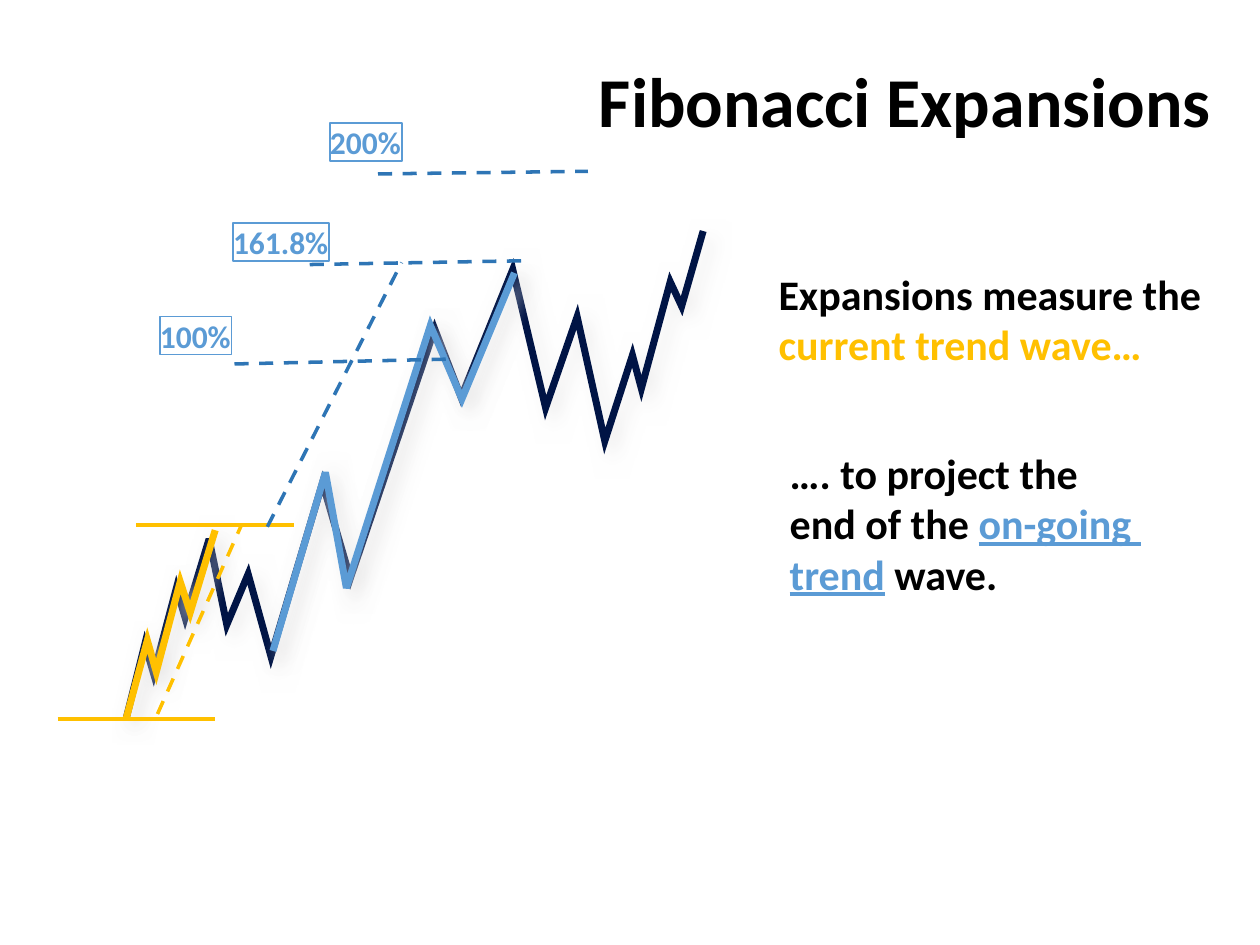
from pptx import Presentation
from pptx.dml.color import RGBColor
from pptx.enum.dml import MSO_LINE
from pptx.enum.shapes import MSO_CONNECTOR, MSO_SHAPE
from pptx.enum.text import MSO_ANCHOR, MSO_AUTO_SIZE, PP_ALIGN
from pptx.oxml import parse_xml
from pptx.oxml.ns import nsdecls, qn
from pptx.util import Pt

BLACK = RGBColor(0x00, 0x00, 0x00)
NAVY = RGBColor(0x00, 0x14, 0x45)
GOLD = RGBColor(0xFF, 0xC0, 0x00)
BLUE = RGBColor(0x5B, 0x9B, 0xD5)
DARK_BLUE = RGBColor(0x2E, 0x75, 0xB5)

# Wave turning points
PRICE = [(72, 411), (82.8, 368), (87.8, 385), (100.8, 336), (105.8, 353),
         (119.5, 308), (129.6, 357), (141.8, 328), (154.8, 375), (184.3, 276),
         (200.2, 330.5), (248.4, 188), (263.5, 227), (293, 154), (311.8, 233),
         (329.8, 181), (345.6, 252), (361.4, 203), (366.5, 222), (383, 161),
         (389.5, 175), (401.8, 132)]
CURRENT_WAVE = [(72, 411), (84.2, 366), (89.3, 384), (103, 332.5), (108.7, 350), (123, 303)]
PROJECTED_WAVE = [(156, 372), (186, 270), (198, 336), (246, 186), (264, 228), (294, 156)]

# Label, its left, top and width, then the ends of its level line
LEVELS = [("100%", 91.4, 180.8, 41, (134, 208), (257, 205.2)),
          ("161.8%", 133.2, 127.4, 55, (177, 151.2), (300, 149)),
          ("200%", 188.6, 70.4, 41, (216, 99.4), (336, 97.9))]


def style_font(font, size, color):
    font.name, font.size, font.bold = "Calibri", Pt(size), True
    font.color.rgb = color


def add_wave(s, points, color):
    """Open zigzag with a soft shadow."""
    (x0, y0), *rest = [(Pt(x), Pt(y)) for x, y in points]
    builder = s.shapes.build_freeform(x0, y0)
    builder.add_line_segments(rest, close=False)
    sp = builder.convert_to_shape()
    sp.fill.background()
    sp.line.color.rgb = color
    sp.line.width = Pt(4)
    sp.line._get_or_add_ln().append(parse_xml(f'<a:miter {nsdecls("a")} lim="800000"/>'))
    sp.shadow.inherit = False
    sp._element.spPr.find(qn("a:effectLst")).append(parse_xml(
        f'<a:outerShdw {nsdecls("a")} blurRad="{Pt(10)}" dist="{Pt(6)}" dir="2700000">'
        '<a:srgbClr val="E7E6E6"><a:alpha val="75000"/></a:srgbClr></a:outerShdw>'))


def add_line(s, start, end, color, dashed=False):
    line = s.shapes.add_connector(MSO_CONNECTOR.STRAIGHT, *map(Pt, start + end))
    line.line.color.rgb = color
    line.line.width = Pt(2)
    if dashed:
        line.line.dash_style = MSO_LINE.DASH
    line._element.spPr.append(parse_xml(f'<a:effectLst {nsdecls("a")}/>'))


def add_label(s, text, left, top, width):
    sp = s.shapes.add_shape(MSO_SHAPE.RECTANGLE, Pt(left), Pt(top), Pt(width), Pt(21.8))
    sp.shadow.inherit = False
    sp.fill.background()
    sp.line.color.rgb = BLUE
    sp.line.width = Pt(1)
    tf = sp.text_frame
    tf.margin_left = tf.margin_right = tf.margin_top = tf.margin_bottom = 0
    tf.vertical_anchor = MSO_ANCHOR.MIDDLE
    tf.word_wrap = False
    tf.auto_size = MSO_AUTO_SIZE.SHAPE_TO_FIT_TEXT
    p = tf.paragraphs[0]
    p.text, p.alignment = text, PP_ALIGN.LEFT
    style_font(p.font, 18, BLUE)


def add_text(s, left, top, width, height, lines):
    """Each line is a list of (text, color, underline) runs."""
    tf = s.shapes.add_textbox(Pt(left), Pt(top), Pt(width), Pt(height)).text_frame
    tf.word_wrap = True
    tf.auto_size = MSO_AUTO_SIZE.SHAPE_TO_FIT_TEXT
    for i, runs in enumerate(lines):
        p = tf.add_paragraph() if i else tf.paragraphs[0]
        for text, color, underline in runs:
            r = p.add_run()
            r.text = text
            style_font(r.font, 24, color)
            if underline:
                r.font.underline = True


def set_title(s, text):
    title = s.shapes.title
    title.left, title.top, title.width, title.height = Pt(330.5), Pt(29.5), Pt(368.6), Pt(55.4)
    tf = title.text_frame
    tf.word_wrap = True
    tf.auto_size = MSO_AUTO_SIZE.NONE
    tf.vertical_anchor = MSO_ANCHOR.TOP
    p = tf.paragraphs[0]
    p.text, p.alignment = text, PP_ALIGN.RIGHT
    style_font(p.font, 40, BLACK)


def main():
    prs = Presentation()
    prs.slide_width, prs.slide_height = Pt(720), Pt(540)
    s = prs.slides.add_slide(prs.slide_layouts[5])
    set_title(s, "Fibonacci Expansions")

    # Explanation
    add_text(s, 437.8, 149.8, 264.2, 65.5, [
        [("Expansions measure the", BLACK, False)],
        [("current trend wave…", GOLD, False)]])
    add_text(s, 444.2, 252, 216.7, 94.3, [
        [("…. to project the", BLACK, False)],
        [("end of the ", BLACK, False), ("on-going ", BLUE, True)],
        [("trend", BLUE, True), (" wave.", BLACK, False)]])

    # Price and its highlighted waves
    add_wave(s, PRICE, NAVY)
    add_wave(s, CURRENT_WAVE, GOLD)
    add_wave(s, PROJECTED_WAVE, BLUE)

    # Measured range and its projection
    add_line(s, (78, 300), (168, 300), GOLD)
    add_line(s, (33, 411), (123, 411), GOLD)
    add_line(s, (90, 408), (138, 300), GOLD, dashed=True)
    add_line(s, (152.8, 301), (229.5, 150), DARK_BLUE, dashed=True)

    # Expansion levels
    for text, left, top, width, start, end in LEVELS:
        add_line(s, start, end, DARK_BLUE, dashed=True)
        add_label(s, text, left, top, width)

    prs.save("out.pptx")


if __name__ == "__main__":
    main()
